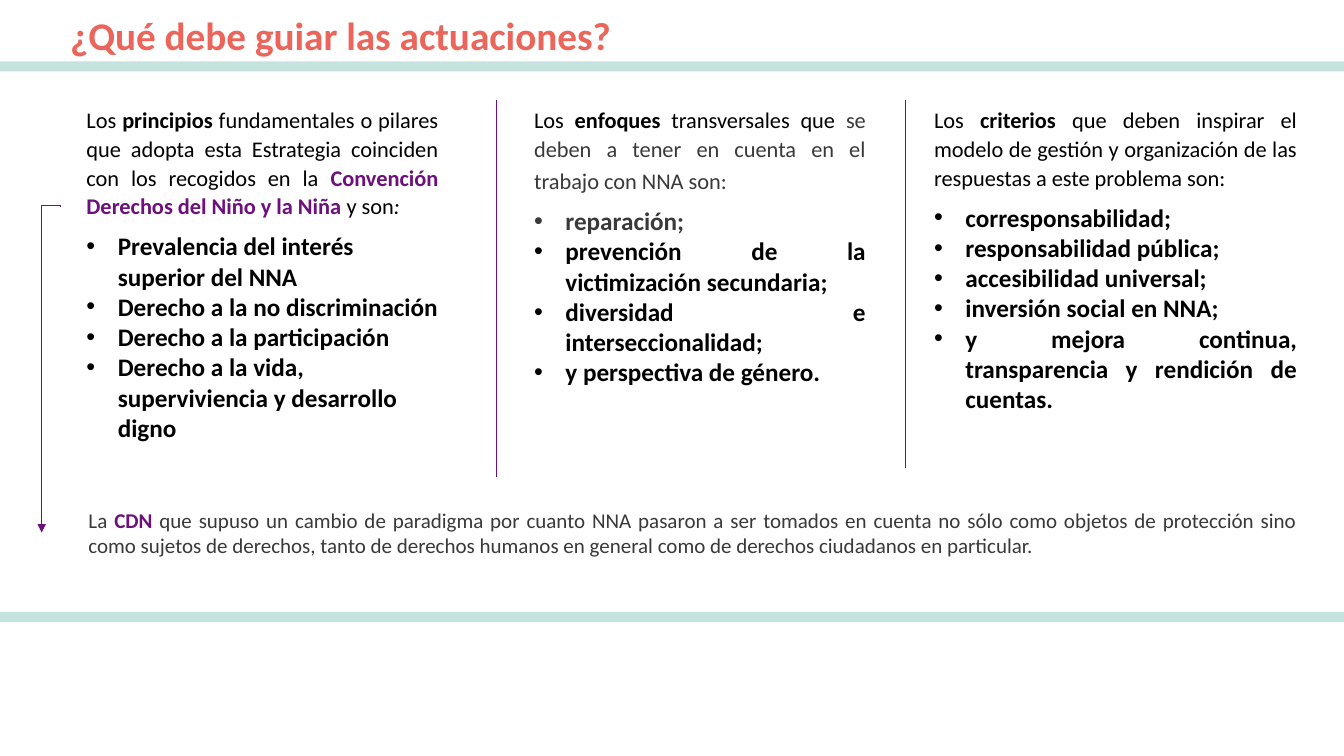
from dataclasses import dataclass

from lxml import etree
from pptx import Presentation
from pptx.dml.color import RGBColor
from pptx.enum.shapes import MSO_CONNECTOR, MSO_SHAPE
from pptx.enum.text import PP_ALIGN
from pptx.oxml.ns import qn
from pptx.util import Cm, Pt

STRAIGHT, ELBOW = MSO_CONNECTOR.STRAIGHT, MSO_CONNECTOR.ELBOW
RECTANGLE = MSO_SHAPE.RECTANGLE
LEFT, JUSTIFY = PP_ALIGN.LEFT, PP_ALIGN.JUSTIFY

FONT = "Calibri"
COLORS = {
    "bar": "C4E3DE",
    "title": "EB655A",
    "purple": "6D0F7D",
    "black": "000000",
    "gray": "3A3838",
}
SLIDE_W, SLIDE_H = 33.87, 19.05
COLUMN_TOP = 2.51
INDENT = 0.79


@dataclass
class Span:
    text: str
    size: float = 16
    color: str = "black"
    bold: bool = False
    italic: bool = False


@dataclass
class Para:
    spans: list[Span]
    align: PP_ALIGN = JUSTIFY
    bullet: bool = False
    line_spacing: float | None = None
    space_after: float | None = None


@dataclass
class Column:
    left: float
    width: float
    height: float
    intro: list[Span]
    items: list[Span]
    item_align: PP_ALIGN = JUSTIFY


def item(text: str, color: str = "black") -> Span:
    return Span(text, 18, color, bold=True)


def rgb(name: str) -> RGBColor:
    return RGBColor.from_string(COLORS[name])


def add_bar(shapes, top: float) -> None:
    sp = shapes.add_shape(RECTANGLE, 0, Cm(top), Cm(SLIDE_W), Cm(0.25))
    sp.shadow.inherit = False
    sp.fill.solid()
    sp.fill.fore_color.rgb = rgb("bar")
    sp.line.fill.background()


def add_text(shapes, left: float, top: float, width: float, height: float,
             paras: list[Para]) -> None:
    tf = shapes.add_textbox(Cm(left), Cm(top), Cm(width), Cm(height)).text_frame
    tf.word_wrap = True
    for i, para in enumerate(paras):
        p = tf.add_paragraph() if i else tf.paragraphs[0]
        if para.bullet:
            pPr = p._p.get_or_add_pPr()
            pPr.set("marL", str(Cm(INDENT)))
            pPr.set("indent", str(-Cm(INDENT)))
            etree.SubElement(pPr, qn("a:buFont")).set("typeface", "Arial")
            etree.SubElement(pPr, qn("a:buChar")).set("char", "•")
        p.alignment = para.align
        if para.line_spacing is not None:
            p.line_spacing = para.line_spacing
        if para.space_after is not None:
            p.space_after = Pt(para.space_after)
        for span in para.spans:
            r = p.add_run()
            r.text = span.text
            r.font.name = FONT
            r.font.size = Pt(span.size)
            r.font.bold = span.bold
            r.font.italic = span.italic
            r.font.color.rgb = rgb(span.color)


def add_line(shapes, kind: MSO_CONNECTOR, x1: float, y1: float,
             x2: float, y2: float):
    line = shapes.add_connector(kind, Cm(x1), Cm(y1), Cm(x2), Cm(y2))
    line.line.color.rgb = rgb("purple")
    line.line.width = Pt(0.5)
    etree.SubElement(line._element.spPr, qn("a:effectLst"))
    return line


def add_bent_arrow(shapes) -> None:
    # An elbow turned a quarter, so that it leaves leftwards and runs down
    spPr = add_line(shapes, ELBOW, -2.82, 9.09, 5.38, 9.55)._element.spPr
    spPr.find(qn("a:xfrm")).set("rot", "5400000")
    adjust = etree.SubElement(spPr.find(qn("a:prstGeom")).find(qn("a:avLst")), qn("a:gd"))
    adjust.set("name", "adj1")
    adjust.set("fmla", "val -500")
    etree.SubElement(spPr.find(qn("a:ln")), qn("a:tailEnd")).set("type", "triangle")


COLUMNS = [
    Column(1.93, 9.37, 10.39, [
        Span("Los "),
        Span("principios", bold=True),
        Span(" fundamentales o pilares que adopta esta Estrategia coinciden "
             "con los recogidos en la "),
        Span("Convención Derechos del Niño y la Niña ", color="purple", bold=True),
        Span("y son"),
        Span(": ", italic=True),
    ], [
        item("Prevalencia del interés superior del NNA"),
        item("Derecho a la no discriminación"),
        item("Derecho a la participación"),
        item("Derecho a la vida, superviviencia y desarrollo digno"),
    ], LEFT),
    Column(13.21, 8.86, 7.44, [
        Span("Los "),
        Span("enfoques", bold=True),
        Span(" transversales que "),
        Span("se deben a tener en cuenta en el trabajo con NNA son:", color="gray"),
        Span(" ", 18, "gray"),
    ], [
        item("reparación; ", "gray"),
        item("prevención de la victimización secundaria; "),
        item("diversidad e interseccionalidad;"),
        item("y perspectiva de género."),
    ]),
    Column(23.29, 9.65, 8.13, [
        Span("Los "),
        Span("criterios", bold=True),
        Span(" que deben inspirar el modelo de gestión y organización de las "
             "respuestas a este problema son: "),
    ], [
        item("corresponsabilidad;"),
        item("responsabilidad pública;"),
        item("accesibilidad universal; "),
        item("inversión social en NNA;"),
        item("y mejora continua, transparencia y rendición de cuentas."),
    ]),
]
DIVIDERS = [(12.5, 12.01), (22.81, 11.79)]  # x, bottom
NOTE = [
    Span("La ", 15, "gray"),
    Span("CDN ", 15, "purple", bold=True),
    Span("que supuso un cambio de paradigma por cuanto NNA pasaron a ser tomados "
         "en cuenta no sólo como objetos de protección sino como sujetos de "
         "derechos, tanto de derechos humanos en general como de derechos "
         "ciudadanos en particular. ", 15, "gray"),
]


def main() -> None:
    prs = Presentation()
    prs.slide_width, prs.slide_height = Cm(SLIDE_W), Cm(SLIDE_H)
    shapes = prs.slides.add_slide(prs.slide_layouts[6]).shapes

    # Bars and title
    for top in (1.55, 15.42):
        add_bar(shapes, top)
    title = Span("¿Qué debe guiar las actuaciones?", 28, "title", bold=True)
    add_text(shapes, 1.52, 0.3, 29.24, 2.21, [Para([title], LEFT, line_spacing=0.9)])

    # Columns and the lines between them
    for col in COLUMNS:
        paras = [Para(col.intro, line_spacing=1.07, space_after=8)]
        paras += [Para([it], col.item_align, bullet=True) for it in col.items]
        add_text(shapes, col.left, COLUMN_TOP, col.width, col.height, paras)
    for x, bottom in DIVIDERS:
        add_line(shapes, STRAIGHT, x, COLUMN_TOP, x, bottom)

    # Note and the arrow leading to it
    add_text(shapes, 1.98, 12.67, 30.96, 1.55, [Para(NOTE)])
    add_bent_arrow(shapes)

    prs.save("out.pptx")


if __name__ == "__main__":
    main()
